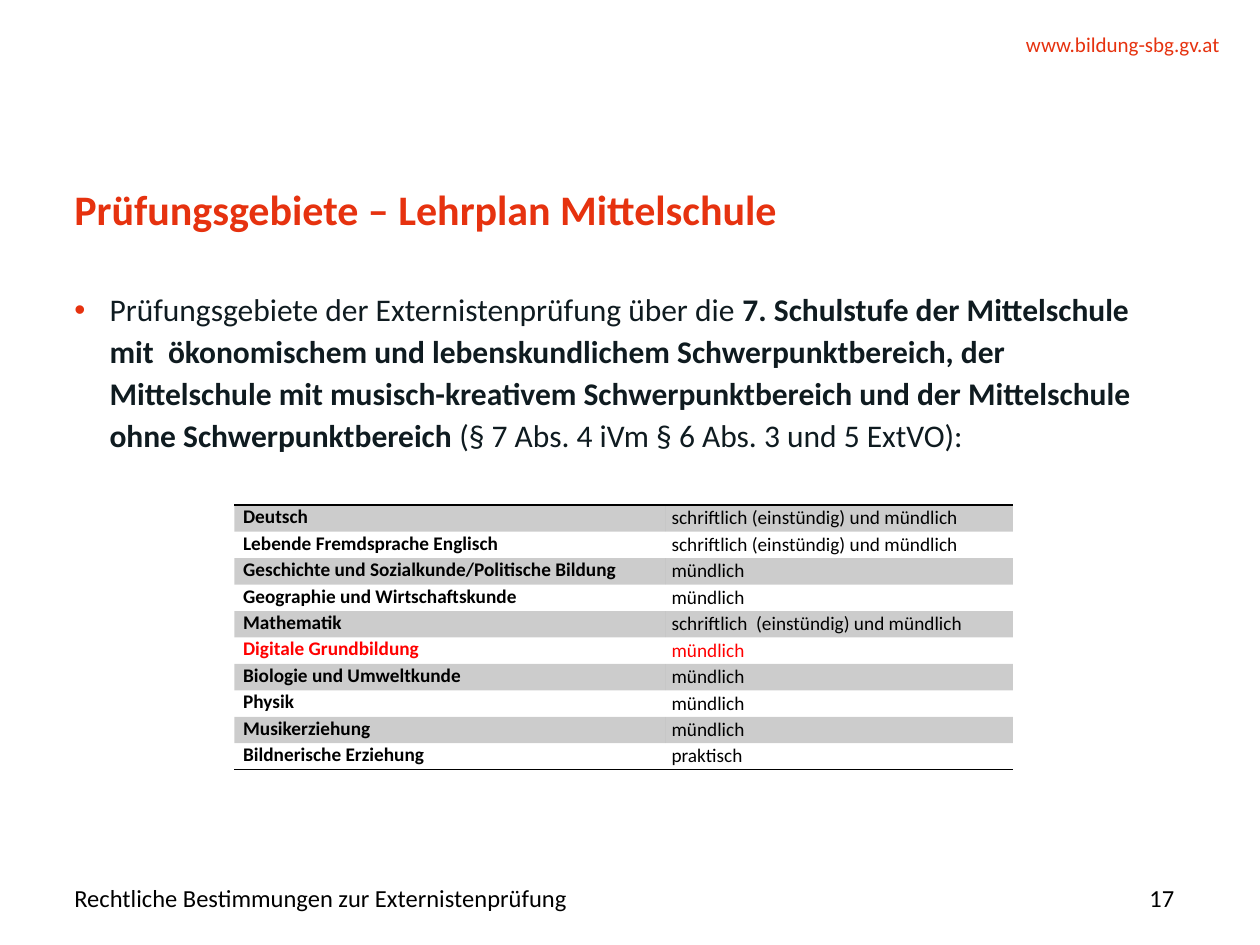
from lxml import etree
from pptx import Presentation
from pptx.dml.color import RGBColor
from pptx.enum.text import MSO_ANCHOR, PP_ALIGN
from pptx.oxml.ns import qn
from pptx.util import Inches, Pt

LEFT, RIGHT, JUST = PP_ALIGN.LEFT, PP_ALIGN.RIGHT, PP_ALIGN.JUSTIFY
TOP, MID = MSO_ANCHOR.TOP, MSO_ANCHOR.MIDDLE
COLOR = {"brand": "E6320F", "body": "0F1B20", "black": "000000", "red": "FF0000"}
PLAIN = "{2D5ABB26-0587-4C30-8999-92F81FD0307C}"  # table style without grid

# Page grid in inches
EDGE, SPAN = 0.59, 8.73
FOOT, FOOT_H = 6.98, 0.29
COLS, ROW = (3.42, 2.76), 0.21

ORAL = "mündlich"
BOTH = "schriftlich (einstündig) und mündlich"
EXAMS = [
    ("Deutsch", BOTH),
    ("Lebende Fremdsprache Englisch", BOTH),
    ("Geschichte und Sozialkunde/Politische Bildung", ORAL),
    ("Geographie und Wirtschaftskunde", ORAL),
    ("Mathematik", "schriftlich  (einstündig) und mündlich"),
    ("Digitale Grundbildung", ORAL),
    ("Biologie und Umweltkunde", ORAL),
    ("Physik", ORAL),
    ("Musikerziehung", ORAL),
    ("Bildnerische Erziehung", "praktisch"),
]
MARKED = "Digitale Grundbildung"
INTRO = [
    ("Prüfungsgebiete der Externistenprüfung über die ", False),
    ("7. Schulstufe der Mittelschule mit  ökonomischem und lebenskundlichem "
     "Schwerpunktbereich, der Mittelschule mit musisch-kreativem "
     "Schwerpunktbereich und der Mittelschule ohne Schwerpunktbereich ", True),
    ("(§ 7 Abs. 4 iVm § 6 Abs. 3 und 5 ExtVO):", False),
]


def assign(item, values):
    for name, value in values.items():
        setattr(item, name, value)


def add_run(para, text, size, color, bold=False):
    run = para.add_run()
    run.text = text
    assign(run.font, {"name": "Calibri", "size": Pt(size), "bold": bold})
    run.font.color.rgb = RGBColor.from_string(COLOR[color])


def add_text(slide, area, runs, size, color, align=LEFT, anchor=TOP, lead=None):
    frame = slide.shapes.add_textbox(*map(Inches, area)).text_frame
    assign(frame, {"word_wrap": True, "vertical_anchor": anchor,
                   "margin_left": 0, "margin_right": 0,
                   "margin_top": 0, "margin_bottom": 0})
    para = frame.paragraphs[0]
    para.alignment = align
    if lead:
        para.line_spacing = Pt(lead)
    for text, bold in runs:
        add_run(para, text, size, color, bold)
    return para


def add_bullet(para, color, indent):
    props = para._p.get_or_add_pPr()
    props.set("marL", str(Inches(indent)))
    props.set("indent", str(-Inches(indent)))
    tint = etree.SubElement(props, qn("a:buClr"))
    etree.SubElement(tint, qn("a:srgbClr"), val=COLOR[color])
    etree.SubElement(props, qn("a:buFont"), typeface="Arial")
    etree.SubElement(props, qn("a:buChar"), char="•")


def add_rule(cell, side):
    line = etree.Element(qn("a:" + side), w=str(Pt(1)))
    fill = etree.SubElement(line, qn("a:solidFill"))
    etree.SubElement(fill, qn("a:srgbClr"), val=COLOR["black"])
    cell._tc.get_or_add_tcPr().insert(0, line)


def shade(cell, banded):
    if not banded:
        cell.fill.background()
        return
    cell.fill.solid()
    cell.fill.fore_color.rgb = RGBColor.from_string(COLOR["black"])
    tint = cell._tc.tcPr.find(".//" + qn("a:srgbClr"))
    etree.SubElement(tint, qn("a:alpha"), val="20000")


def add_exams(slide, left, top):
    count = len(EXAMS)
    area = (left, top, sum(COLS), ROW * count)
    table = slide.shapes.add_table(count, len(COLS), *map(Inches, area)).table
    table._tbl.tblPr.find(qn("a:tableStyleId")).text = PLAIN
    assign(table, {"first_row": False, "horz_banding": False})
    for col, width in zip(table.columns, COLS):
        col.width = Inches(width)
    for i, exam in enumerate(EXAMS):
        table.rows[i].height = Inches(ROW)
        color = "red" if exam[0] == MARKED else "black"
        for j, text in enumerate(exam):
            cell = table.cell(i, j)
            pad = Inches(0.01 * j)
            assign(cell, {"margin_left": Inches((0.07, 0.05)[j]),
                          "margin_right": Inches((0.07, 0.01)[j]),
                          "margin_top": pad, "margin_bottom": pad})
            para = cell.text_frame.paragraphs[0]
            para.alignment = JUST
            add_run(para, text, 11, color, j == 0)
            shade(cell, i % 2 == 0)
            if i == 0:
                add_rule(cell, "lnT")
            if i == count - 1:
                add_rule(cell, "lnB")


def main():
    deck = Presentation()
    assign(deck, {"slide_width": Inches(10), "slide_height": Inches(7.5)})
    slide = deck.slides.add_slide(deck.slide_layouts[6])

    # Header and title
    add_text(slide, (7.27, 0.25, 2.41, 0.2),
             [("www.bildung-sbg.gv.at", False)], 12, "brand", RIGHT)
    add_text(slide, (EDGE, 1.44, SPAN, 0.91),
             [("Prüfungsgebiete – Lehrplan Mittelschule", True)],
             24, "brand", lead=30)

    # Introduction
    intro = add_text(slide, (EDGE, 2.27, SPAN, 4.29), INTRO, 18, "body", lead=24)
    intro.space_after = Pt(14.2)
    add_bullet(intro, "brand", 0.28)

    # Footer
    add_text(slide, (EDGE, FOOT, 7.52, FOOT_H),
             [("Rechtliche Bestimmungen zur Externistenprüfung", False)],
             14, "black", anchor=MID)
    add_text(slide, (8.43, FOOT, 0.89, FOOT_H), [("17", False)],
             14, "black", RIGHT, MID)

    # Exam subjects
    add_exams(slide, 1.86, 4.01)
    deck.save("out.pptx")


if __name__ == "__main__":
    main()
